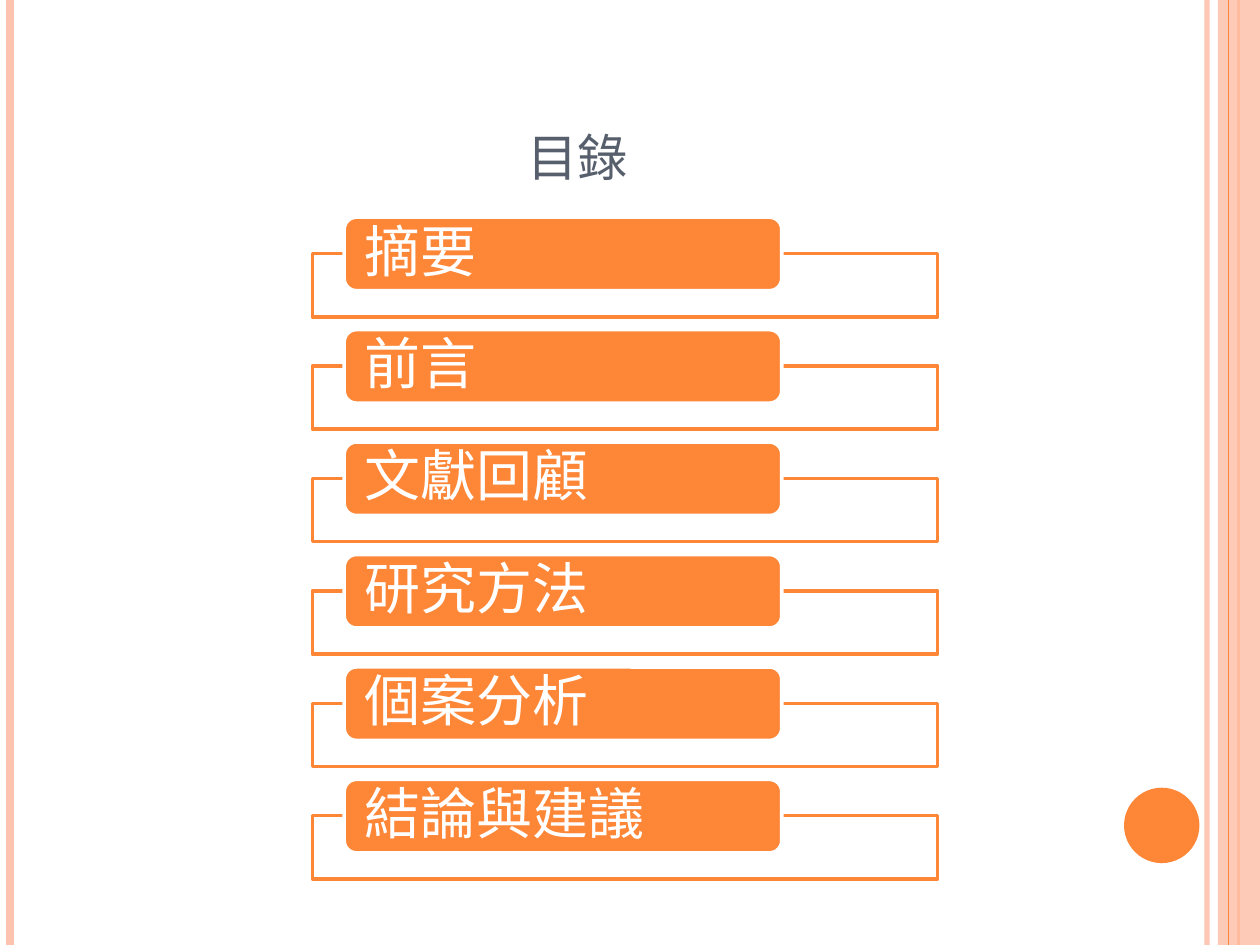
import dataclasses

import pptx
import pptx.dml.color
import pptx.enum.shapes
import pptx.enum.text
import pptx.oxml.ns
import pptx.oxml.xmlchemy
import pptx.util
from lxml import etree

Cm, Pt = pptx.util.Cm, pptx.util.Pt
SHAPE = pptx.enum.shapes.MSO_SHAPE
ALIGN = pptx.enum.text.PP_ALIGN
ANCHOR = pptx.enum.text.MSO_ANCHOR
qn = pptx.oxml.ns.qn


@dataclasses.dataclass(frozen=True)
class Theme:
    accent: str = "FE8637"
    pale: str = "FEC3AE"
    white: str = "FFFFFF"
    title: str = "575F6D"
    font: str = "Noto Sans CJK SC"
    title_size: int = 36
    item_size: int = 32


THEME = Theme()
WIDTH, HEIGHT = 25.4, 19.05
CHAPTERS = ["摘要", "前言", "文獻回顧", "研究方法", "個案分析", "結論與建議"]


def paint(color_format, color, alpha=100):
    """Set a colour, with its opacity in percent."""
    color_format.rgb = pptx.dml.color.RGBColor.from_string(color)
    if alpha < 100:
        # The colour element is reached through its owner's fill.
        return str(alpha * 1000)
    return None


def fill_with(fill, parent, color, alpha=100):
    """Fill solidly; parent is the XML element that holds the fill."""
    fill.solid()
    value = paint(fill.fore_color, color, alpha)
    if value:
        rgb = parent.find(qn("a:solidFill")).find(qn("a:srgbClr"))
        etree.SubElement(rgb, qn("a:alpha"), val=value)


def add_box(shapes, kind, box, fill, alpha=100, line=None, weight=2):
    s = shapes.add_shape(kind, *map(Cm, box))
    s.shadow.inherit = False
    fill_with(s.fill, s._element.spPr, fill, alpha)
    if line:
        fill_with(s.line.fill, s.line._get_or_add_ln(), line)
        s.line.width = Pt(weight)
    else:
        s.line.fill.background()
    return s


def add_rule(shapes, x, height, color, weight, alpha=100):
    """Draw a vertical line from the top edge."""
    s = shapes.add_connector(pptx.enum.shapes.MSO_CONNECTOR.STRAIGHT,
                             Cm(x), Cm(0), Cm(x), Cm(height))
    s.line.width = Pt(weight)
    fill_with(s.line.fill, s.line._get_or_add_ln(), color, alpha)
    etree.SubElement(s._element.spPr, qn("a:effectLst"))


def add_text(shapes, box, text, size, color, align=ALIGN.LEFT,
             anchor=ANCHOR.MIDDLE, insets=(0.25, 0.13), spacing=None,
             small_caps=False):
    tf = shapes.add_textbox(*map(Cm, box)).text_frame
    tf.word_wrap = True
    tf.vertical_anchor = anchor
    tf.margin_left = tf.margin_right = Cm(insets[0])
    tf.margin_top = tf.margin_bottom = Cm(insets[1])
    p = tf.paragraphs[0]
    p.alignment = align
    if spacing:
        p.line_spacing = spacing
    r = p.add_run()
    r.text = text
    r.font.size = Pt(size)
    r.font.name = THEME.font
    paint_font = r.font.color
    paint(paint_font, color)
    props = r.font._element
    etree.SubElement(props, qn("a:ea"), typeface=THEME.font)
    if small_caps:
        props.set("cap", "small")


def add_edges(shapes, width, height):
    """Draw the striped side edges and the round page mark."""
    add_rule(shapes, width - 1.07, height, THEME.pale, 3, alpha=93)
    add_rule(shapes, 0.21, height, THEME.pale, 4.5)
    add_rule(shapes, width - 0.43, height, THEME.accent, 1.5)
    add_box(shapes, SHAPE.RECTANGLE, (width - 0.85, 0, 0.85, height),
            THEME.pale, alpha=87)
    add_rule(shapes, width - 0.64, height, THEME.accent, 0.75)
    add_box(shapes, SHAPE.OVAL, (width - 2.74, height - 3.17, 1.52, 1.52),
            THEME.accent)


def add_title(shapes, box, text):
    add_text(shapes, box, text, THEME.title_size, THEME.title,
             align=ALIGN.CENTER, anchor=ANCHOR.BOTTOM, small_caps=True)


def add_chapter(shapes, box, text):
    """Draw an open frame with a rounded tab on its top edge."""
    x, y, w, h = box
    drop, indent, pad = 0.73, 0.64, 0.07
    tab_w, tab_h = 0.7 * w, 1.48
    add_box(shapes, SHAPE.RECTANGLE, (x, y + drop, w, h - drop),
            THEME.white, alpha=90, line=THEME.accent)
    add_box(shapes, SHAPE.ROUNDED_RECTANGLE, (x + indent, y, tab_w, tab_h),
            THEME.accent, line=THEME.white)
    add_text(shapes,
             (x + indent + pad, y + pad, tab_w - 2 * pad, tab_h - 2 * pad),
             text, THEME.item_size, THEME.white, insets=(0.33, 0), spacing=0.9)


def add_contents(shapes, box, chapters, gap=0.26):
    """Stack the chapters evenly inside one group."""
    x, y, w, h = box
    group = shapes.add_group_shape()
    pitch = (h + gap) / len(chapters)
    for i, chapter in enumerate(chapters):
        add_chapter(group.shapes, (x, y + i * pitch, w, pitch - gap), chapter)


def main():
    prs = pptx.Presentation()
    prs.slide_width, prs.slide_height = Cm(WIDTH), Cm(HEIGHT)
    slide = prs.slides.add_slide(prs.slide_layouts[6])
    fill = slide.background.fill
    fill.solid()
    paint(fill.fore_color, THEME.white)
    add_edges(slide.shapes, WIDTH, HEIGHT)
    add_title(slide.shapes, (1.27, 0.76, 20.75, 3.18), "目錄")
    add_contents(slide.shapes, (6.3, 4.38, 12.6, 13.34), CHAPTERS)
    prs.save("out.pptx")


if __name__ == "__main__":
    main()
